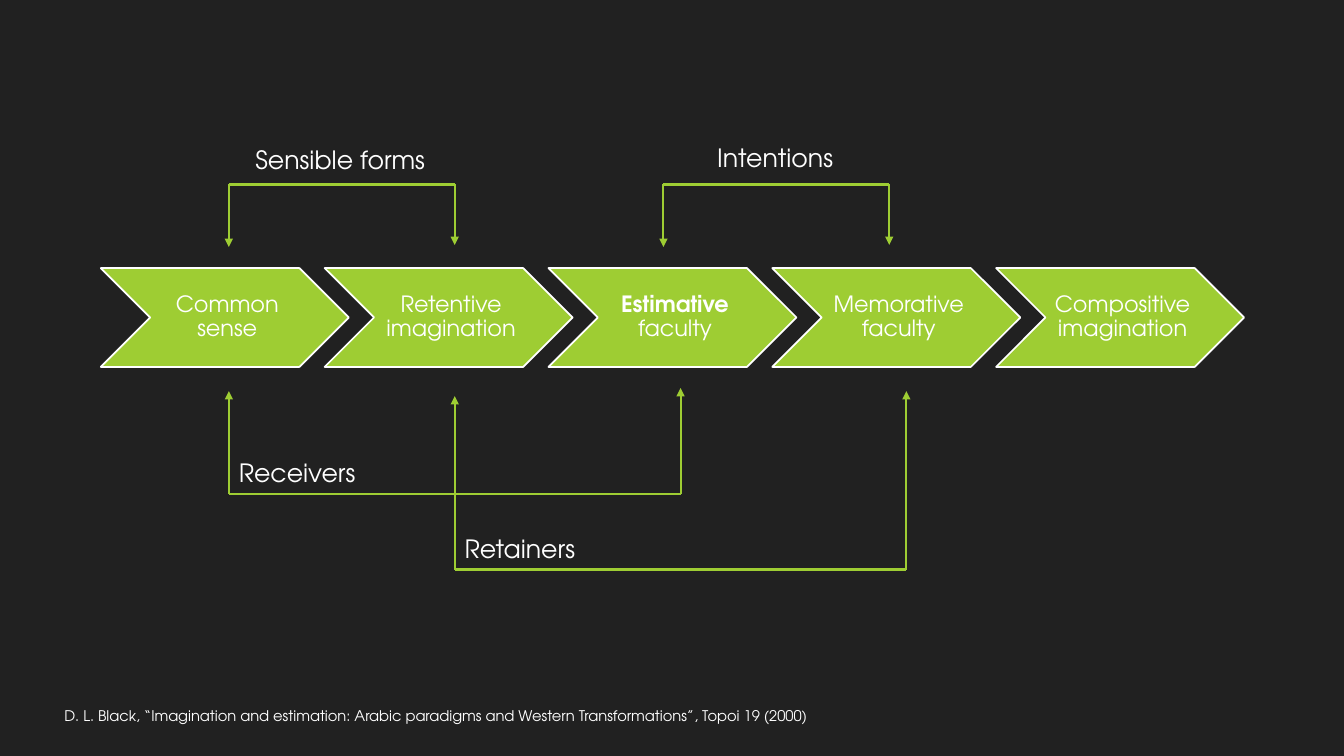
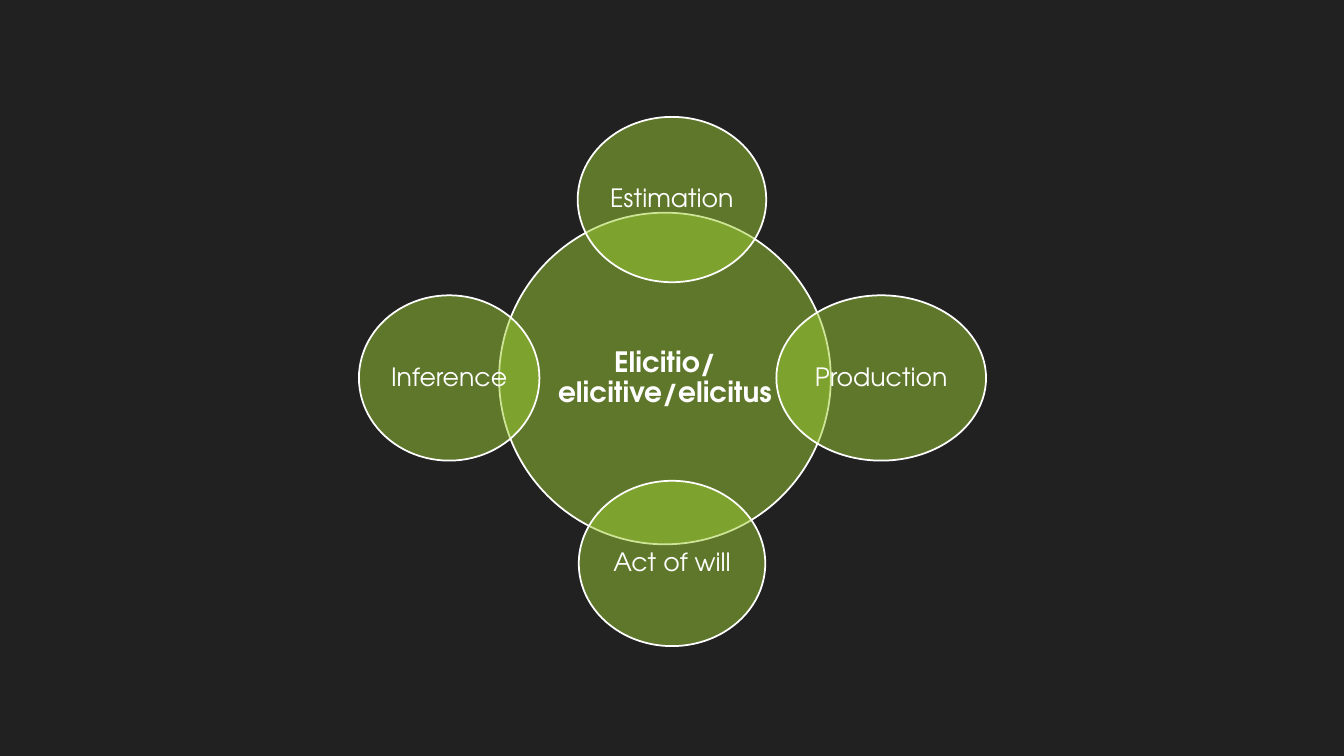
from dataclasses import dataclass
from typing import Optional

from lxml import etree
from pptx import Presentation
from pptx import util as u
from pptx.dml.color import RGBColor
from pptx.enum import shapes, text
from pptx.oxml.ns import qn

COLORS = {"ground": "212121", "green": "9ECD33", "white": "FFFFFF"}
FONT = "TeX Gyre Adventor"
FACULTY_LEFT, FACULTY_TOP, FACULTY_STEP = 1, 2.66, 2.22
FACULTY_WIDTH, FACULTY_HEIGHT = 2.46, 0.98
LABEL_HEIGHT = 0.4


@dataclass(frozen=True)
class Run:
    wording: str
    bold: bool = False


@dataclass(frozen=True)
class Bracket:
    label: str
    label_width: float
    label_top: float
    left: float
    right: float
    bar: float
    left_tip: float
    right_tip: float
    centred: bool


@dataclass(frozen=True)
class Circle:
    run: Run
    left: float
    top: float
    width: float
    height: float
    size: float = 18


FACULTIES = [
    [Run("Common sense")],
    [Run("Retentive imagination")],
    [Run("Estimative", True), Run(" faculty")],
    [Run("Memorative faculty")],
    [Run("Compositive imagination")],
]
BRACKETS = [
    Bracket("Receivers", 1.38, 4.49, 2.27, 6.75, 4.9, 3.88, 3.85, False),
    Bracket("Retainers", 1.32, 5.24, 4.51, 8.99, 5.65, 3.93, 3.88, False),
    Bracket("Sensible forms", 1.91, 1.38, 2.27, 4.51, 1.83, 2.45, 2.43, True),
    Bracket("Intentions", 1.37, 1.36, 6.58, 8.82, 1.83, 2.45, 2.43, True),
]
CIRCLES = [
    Circle(Run("Elicitio/elicitive/elicitus", True), 4.95, 2.11, 3.29, 3.29, 20),
    Circle(Run("Estimation"), 5.73, 1.16, 1.87, 1.64),
    Circle(Run("Production"), 7.7, 2.93, 2.08, 1.64),
    Circle(Run("Act of will"), 5.74, 4.77, 1.85, 1.64),
    Circle(Run("Inference"), 3.56, 2.93, 1.79, 1.64),
]
CITATION = ("D. L. Black, “Imagination and estimation: Arabic paradigms "
            "and Western Transformations”, Topoi 19 (2000)")


def color(name: str) -> RGBColor:
    return RGBColor.from_string(COLORS[name])


def write(frame, runs: list[Run], size: float) -> None:
    paragraph = frame.paragraphs[0]
    paragraph.font.size = u.Pt(size)
    paragraph.font.name = FONT
    paragraph.font.color.rgb = color("white")
    for item in runs:
        run = paragraph.add_run()
        run.text = item.wording
        if item.bold:
            run.font.bold = True


def add_node(slide, preset, box: tuple, runs: list[Run], size: float,
             insets: tuple, opacity: Optional[int] = None) -> None:
    """Green outlined shape with centred text; opacity in percent."""
    node = slide.shapes.add_shape(preset, *map(u.Inches, box))
    node.shadow.inherit = False
    node.fill.solid()
    node.fill.fore_color.rgb = color("green")
    if opacity is not None:
        fill_color = node.element.spPr.find(qn("a:solidFill"))[0]
        etree.SubElement(fill_color, qn("a:alpha"), val=str(opacity * 1000))
    node.line.color.rgb = color("white")
    node.line.width = u.Pt(1.25)
    frame = node.text_frame
    frame.word_wrap = True
    frame.vertical_anchor = text.MSO_ANCHOR.MIDDLE
    (frame.margin_left, frame.margin_top,
     frame.margin_right, frame.margin_bottom) = map(u.Inches, insets)
    write(frame, runs, size)
    frame.paragraphs[0].alignment = text.PP_ALIGN.CENTER
    frame.paragraphs[0].line_spacing = 0.9


def add_label(slide, box: tuple, wording: str, size: float, wrap: bool = False) -> None:
    frame = slide.shapes.add_textbox(*map(u.Inches, box)).text_frame
    frame.word_wrap = wrap
    frame.auto_size = text.MSO_AUTO_SIZE.SHAPE_TO_FIT_TEXT
    write(frame, [Run(wording)], size)


def add_line(slide, start: tuple, end: tuple, arrow: bool = False) -> None:
    line = slide.shapes.add_connector(
        shapes.MSO_CONNECTOR.STRAIGHT, *map(u.Inches, start + end))
    line.line.color.rgb = color("green")
    line.line.width = u.Pt(1.5)
    if arrow:
        etree.SubElement(line.line._get_or_add_ln(), qn("a:tailEnd"), type="triangle")
    etree.SubElement(line.element.spPr, qn("a:effectLst"))


def add_bracket(slide, b: Bracket) -> None:
    add_line(slide, (b.left, b.bar), (b.right, b.bar))
    for x, tip in ((b.left, b.left_tip), (b.right, b.right_tip)):
        add_line(slide, (x, b.bar), (x, tip), arrow=True)
    label_left = (b.left + b.right - b.label_width) / 2 if b.centred else b.left
    add_label(slide, (label_left, b.label_top, b.label_width, LABEL_HEIGHT), b.label, 18)


def build_faculties(slide) -> None:
    # Chain of faculties
    for i, runs in enumerate(FACULTIES):
        box = (FACULTY_LEFT + i * FACULTY_STEP, FACULTY_TOP, FACULTY_WIDTH, FACULTY_HEIGHT)
        add_node(slide, shapes.MSO_SHAPE.CHEVRON, box, runs, 16, (0.07, 0.02, 0.02, 0.02))
    # Pairings above and below the chain
    for bracket in BRACKETS:
        add_bracket(slide, bracket)
    # Citation
    add_label(slide, (0.54, 6.96, 12.03, 0.28), CITATION, 10.5, wrap=True)


def build_elicitio(slide) -> None:
    # Central term and its four overlapping meanings
    for c in CIRCLES:
        add_node(slide, shapes.MSO_SHAPE.OVAL, (c.left, c.top, c.width, c.height),
                 [c.run], c.size, (0.03,) * 4, opacity=50)


def main() -> None:
    prs = Presentation()
    prs.slide_width, prs.slide_height = u.Inches(13.33), u.Inches(7.5)
    # Shared dark background
    ground = prs.slide_master.background.fill
    ground.solid()
    ground.fore_color.rgb = color("ground")
    for build in (build_faculties, build_elicitio):
        build(prs.slides.add_slide(prs.slide_layouts[6]))
    prs.save("out.pptx")


if __name__ == "__main__":
    main()
